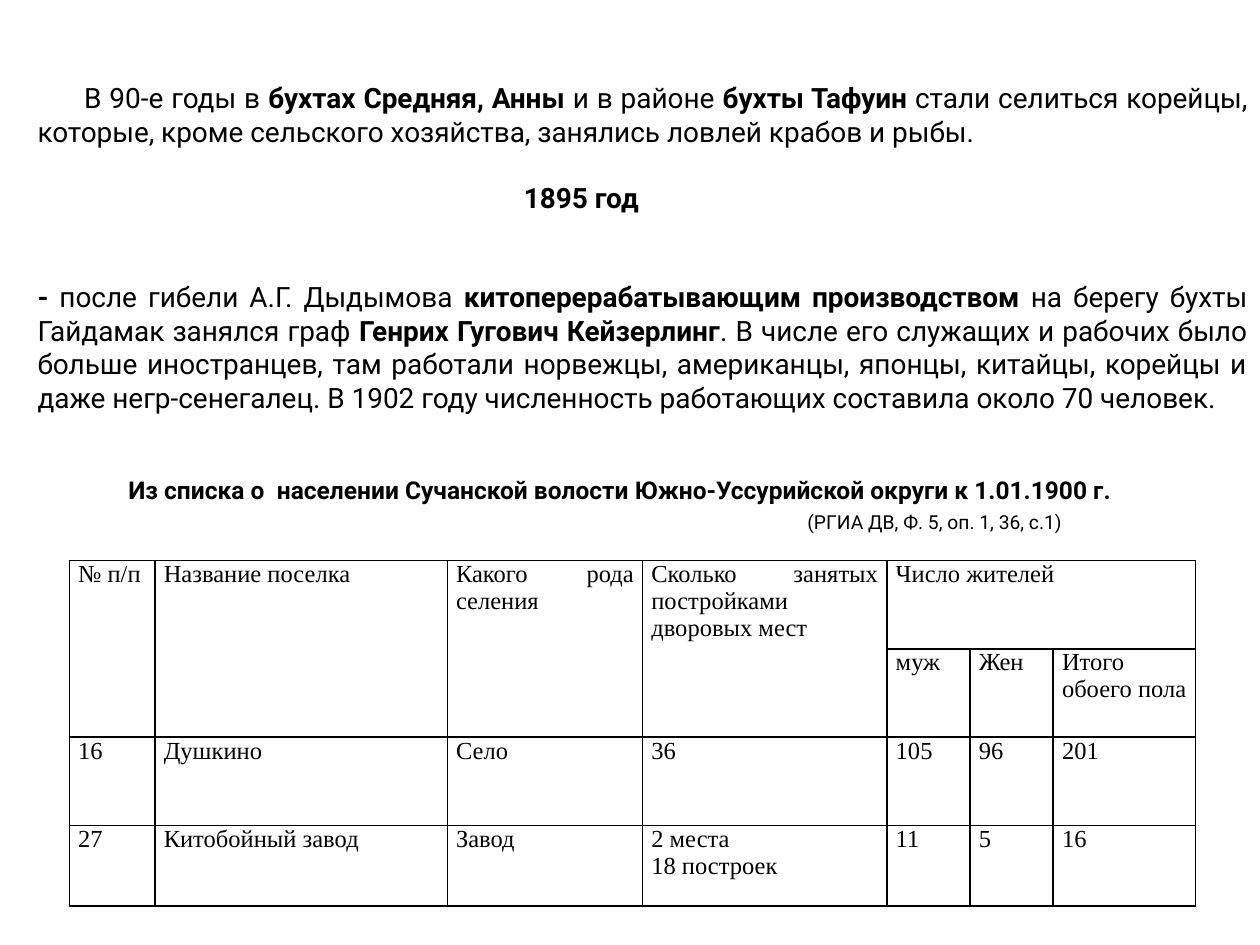
import pptx
import pptx.dml.color
import pptx.enum.text
import pptx.oxml
import pptx.oxml.ns
import pptx.util

BLACK = pptx.dml.color.RGBColor(0, 0, 0)
BODY_FONT = "Roboto"
TABLE_FONT = "Times New Roman"
LEFT = pptx.enum.text.PP_ALIGN.LEFT
JUSTIFY = pptx.enum.text.PP_ALIGN.JUSTIFY

# The slide is a grid of 100 columns by 75 rows
SLIDE_WIDTH, SLIDE_HEIGHT = pptx.util.Inches(10), pptx.util.Inches(7.5)
COLUMN, ROW = SLIDE_WIDTH / 100, SLIDE_HEIGHT / 75

# Each paragraph: text with bold parts between asterisks, then its format
STORY = [
    ("В 90-е годы в *бухтах Средняя, Анны* и в районе *бухты Тафуин* стали "
     "селиться корейцы, которые, кроме сельского хозяйства, занялись ловлей "
     "крабов и рыбы.", dict(first_indent=3.7, align=JUSTIFY)),
    ("*1895 год*", dict(before=18.75, indent=38.6)),
    ("*-* после гибели А.Г. Дыдымова *китоперерабатывающим производством* на "
     "берегу бухты Гайдамак занялся граф *Генрих Гугович Кейзерлинг*. В числе "
     "его служащих и рабочих было больше иностранцев, там работали норвежцы, "
     "американцы, японцы, китайцы, корейцы и даже негр-сенегалец. В 1902 году "
     "численность работающих составила около 70 человек.",
     dict(before=37.5, align=JUSTIFY)),
    ("*Из списка о  населении Сучанской волости Южно-Уссурийской округи "
     "к 1.01.1900 г.*", dict(size=14, before=35, indent=7.2)),
    ("(РГИА ДВ, Ф. 5, оп. 1, 36, с.1)", dict(size=11, before=3, indent=61.1)),
]

COLUMN_WIDTHS = [6.8, 23.2, 15.5, 19.4, 6.6, 6.6, 11.3]
ROW_HEIGHTS = [7, 7, 7, 6.4]
POPULATION = [
    ["№ п/п", "Название поселка", "Какого рода селения",
     "Сколько занятых постройками дворовых мест", "Число жителей", "", ""],
    ["", "", "", "", "муж", "Жен", "Итого обоего пола"],
    ["16", "Душкино", "Село", "36", "105", "96", "201"],
    ["27", "Китобойный завод", "Завод", "2 места\n18 построек", "11", "5", "16"],
]


def write(para, text, size=16, font=BODY_FONT, align=LEFT, before=0,
          indent=0, first_indent=0):
    """Fill a paragraph; asterisks switch bold on and off."""
    properties = para._p.get_or_add_pPr()
    properties.set("marL", str(round(indent * COLUMN)))
    properties.set("indent", str(round(first_indent * COLUMN)))
    para.alignment = align
    para.space_before = pptx.util.Pt(before)
    for position, part in enumerate(text.split("*")):
        if part:
            span = para.add_run()
            span.text = part
            span.font.name = font
            span.font.size = pptx.util.Pt(size)
            span.font.bold = position % 2 == 1
            span.font.color.rgb = BLACK


def place(left, top, width, height):
    """Turn grid units into slide lengths."""
    return (round(left * COLUMN), round(top * ROW),
            round(width * COLUMN), round(height * ROW))


def add_story(page, box):
    """Running text, ending with the caption and source of the table."""
    frame = page.shapes.add_textbox(*place(*box)).text_frame
    frame.word_wrap = True
    frame.vertical_anchor = pptx.enum.text.MSO_ANCHOR.TOP
    frame.margin_top = round(0.9 * ROW)
    for position, (text, style) in enumerate(STORY):
        para = frame.add_paragraph() if position else frame.paragraphs[0]
        write(para, text, **style)


def draw_borders(cell):
    """Thin black lines on all four sides, with no fill."""
    properties = cell._tc.get_or_add_tcPr()
    for side in ("lnL", "lnR", "lnT", "lnB"):
        properties.append(pptx.oxml.parse_xml(
            f'<a:{side} {pptx.oxml.ns.nsdecls("a")} w="12700">'
            f'<a:solidFill><a:srgbClr val="{BLACK}"/></a:solidFill></a:{side}>'))
    cell.fill.background()


def add_population_table(page, box):
    """Population by settlement, under a two-row heading."""
    table = page.shapes.add_table(
        len(ROW_HEIGHTS), len(COLUMN_WIDTHS), *place(*box)).table
    table.first_row = table.horz_banding = False
    for column, width in zip(table.columns, COLUMN_WIDTHS):
        column.width = round(width * COLUMN)
    for row, height in zip(table.rows, ROW_HEIGHTS):
        row.height = round(height * ROW)

    # Headings that span rows or columns
    for column in range(4):
        table.cell(0, column).merge(table.cell(1, column))
    table.cell(0, 4).merge(table.cell(0, 6))

    for row, values in enumerate(POPULATION):
        for column, value in enumerate(values):
            cell = table.cell(row, column)
            cell.margin_left = cell.margin_right = round(0.7 * COLUMN)
            cell.margin_top = cell.margin_bottom = 0
            draw_borders(cell)
            for position, line in enumerate(value.split("\n")):
                frame = cell.text_frame
                para = frame.add_paragraph() if position else frame.paragraphs[0]
                write(para, line, size=14, font=TABLE_FONT, align=JUSTIFY)


def main():
    deck = pptx.Presentation()
    deck.slide_width, deck.slide_height = SLIDE_WIDTH, SLIDE_HEIGHT
    page = deck.slides.add_slide(deck.slide_layouts[6])
    add_story(page, (2, 5.5, 98, 47.1))
    add_population_table(
        page, (5.5, 44.5, sum(COLUMN_WIDTHS), sum(ROW_HEIGHTS)))
    deck.save("out.pptx")


if __name__ == "__main__":
    main()
